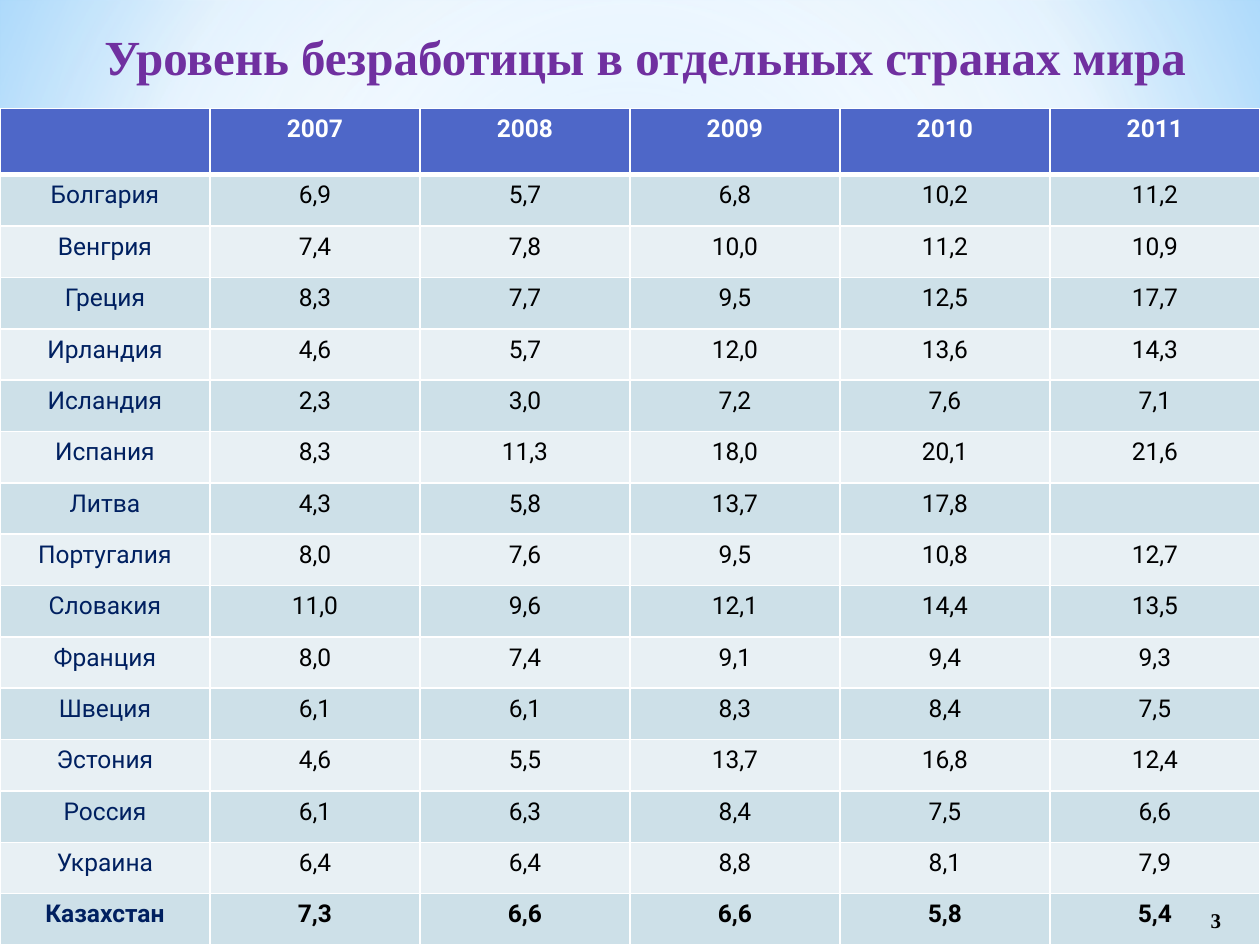
from dataclasses import dataclass

from lxml.etree import SubElement
from pptx import Presentation
from pptx.dml.color import RGBColor
from pptx.enum.shapes import MSO_SHAPE
from pptx.enum.text import MSO_ANCHOR, PP_ALIGN
from pptx.oxml.ns import qn
from pptx.util import Pt

WHITE = RGBColor(0xFF, 0xFF, 0xFF)
BLACK = RGBColor(0x00, 0x00, 0x00)
NAVY = RGBColor(0x00, 0x20, 0x60)
PURPLE = RGBColor(0x70, 0x30, 0xA0)
HEADER_BLUE = RGBColor(0x4E, 0x67, 0xC8)
BAND_DARK = RGBColor(0xCD, 0xE0, 0xE8)
BAND_LIGHT = RGBColor(0xE8, 0xF0, 0xF4)
SKY = RGBColor(0x9E, 0xD5, 0xFF)
DEEP_SKY = RGBColor(0x5B, 0xB9, 0xFF)
PALE_SKY = RGBColor(0xB4, 0xDC, 0xFA)

SLIDE_WIDTH, SLIDE_HEIGHT = 720, 540
TABLE_TOP = 61.92
HEADER_HEIGHT = 38


@dataclass
class GradientStop:
    position: int
    color: RGBColor
    opacity: int = 100


@dataclass
class Country:
    name: str
    rates: str
    bold: bool = False


YEARS = ["2007", "2008", "2009", "2010", "2011"]
COUNTRIES = [
    Country("Болгария", "6,9 5,7 6,8 10,2 11,2"),
    Country("Венгрия", "7,4 7,8 10,0 11,2 10,9"),
    Country("Греция", "8,3 7,7 9,5 12,5 17,7"),
    Country("Ирландия", "4,6 5,7 12,0 13,6 14,3"),
    Country("Исландия", "2,3 3,0 7,2 7,6 7,1"),
    Country("Испания", "8,3 11,3 18,0 20,1 21,6"),
    Country("Литва", "4,3 5,8 13,7 17,8"),
    Country("Португалия", "8,0 7,6 9,5 10,8 12,7"),
    Country("Словакия", "11,0 9,6 12,1 14,4 13,5"),
    Country("Франция", "8,0 7,4 9,1 9,4 9,3"),
    Country("Швеция", "6,1 6,1 8,3 8,4 7,5"),
    Country("Эстония", "4,6 5,5 13,7 16,8 12,4"),
    Country("Россия", "6,1 6,3 8,4 7,5 6,6"),
    Country("Украина", "6,4 6,4 8,8 8,1 7,9"),
    Country("Казахстан", "7,3 6,6 6,6 5,8 5,4", bold=True),
]


def write_text(text_frame, text: str, *, size: float = 14, font: str = "Roboto",
               color: RGBColor = BLACK, bold: bool = False) -> None:
    paragraph = text_frame.paragraphs[0]
    paragraph.alignment = PP_ALIGN.CENTER
    run = paragraph.add_run()
    run.text = text
    run.font.size = Pt(size)
    run.font.name = font
    run.font.bold = bold
    run.font.color.rgb = color


def add_text_box(slide, left: float, top: float, width: float, height: float,
                 text: str, anchor=MSO_ANCHOR.TOP, **text_format) -> None:
    box = slide.shapes.add_textbox(Pt(left), Pt(top), Pt(width), Pt(height))
    box.text_frame.word_wrap = True
    box.text_frame.vertical_anchor = anchor
    write_text(box.text_frame, text, **text_format)


def set_radial_gradient(fill, parent, stops: list[GradientStop],
                        focus: tuple[int, int, int, int]) -> None:
    """Fill with a circular gradient; focus is left, top, right, bottom in percent."""
    fill.gradient()
    gradient = parent.find(qn("a:gradFill"))
    for child in list(gradient):
        gradient.remove(child)
    stop_list = SubElement(gradient, qn("a:gsLst"))
    for stop in stops:
        element = SubElement(stop_list, qn("a:gs"), pos=str(stop.position * 1000))
        color = SubElement(element, qn("a:srgbClr"), val=str(stop.color))
        if stop.opacity < 100:
            SubElement(color, qn("a:alpha"), val=str(stop.opacity * 1000))
    shade = SubElement(gradient, qn("a:path"))
    shade.set("path", "circle")
    sides = {side: str(value * 1000) for side, value in zip("ltrb", focus)}
    SubElement(shade, qn("a:fillToRect"), **sides)


def add_background(slide) -> None:
    fill = slide.background.fill
    background = slide.element.cSld.find(qn("p:bg")).find(qn("p:bgPr"))
    set_radial_gradient(
        fill, background,
        [GradientStop(0, SKY), GradientStop(60, WHITE), GradientStop(100, DEEP_SKY)],
        (20, 10, 20, 60))
    glow = slide.shapes.add_shape(MSO_SHAPE.RECTANGLE, 0, 0, Pt(SLIDE_WIDTH), Pt(402))
    glow.shadow.inherit = False
    glow.line.fill.background()
    set_radial_gradient(
        glow.fill, glow.element.spPr,
        [GradientStop(0, WHITE, 89), GradientStop(48, WHITE, 62),
         GradientStop(100, PALE_SKY, 79)],
        (50, 50, 50, 50))


def set_borders(cell, top: float = 1, bottom: float = 1) -> None:
    properties = cell._tc.get_or_add_tcPr()
    for side, width in (("L", 1), ("R", 1), ("T", top), ("B", bottom)):
        line = SubElement(properties, qn(f"a:ln{side}"), w=str(Pt(width)))
        solid = SubElement(line, qn("a:solidFill"))
        SubElement(solid, qn("a:srgbClr"), val=str(WHITE))


def fill_cell(cell, text: str, fill: RGBColor, *, top: float = 1, bottom: float = 1,
              **text_format) -> None:
    set_borders(cell, top, bottom)
    cell.fill.solid()
    cell.fill.fore_color.rgb = fill
    if text:
        write_text(cell.text_frame, text, **text_format)


def add_unemployment_table(slide) -> None:
    row_count, column_count = len(COUNTRIES) + 1, len(YEARS) + 1
    height = SLIDE_HEIGHT - TABLE_TOP
    table = slide.shapes.add_table(row_count, column_count, 0, Pt(TABLE_TOP),
                                   Pt(SLIDE_WIDTH), Pt(height)).table
    table.first_row = False
    table.horz_banding = False
    for row in table.rows:
        row.height = Pt((height - HEADER_HEIGHT) / len(COUNTRIES))
    table.rows[0].height = Pt(HEADER_HEIGHT)

    for column, year in enumerate(["", *YEARS]):
        fill_cell(table.cell(0, column), year, HEADER_BLUE, bottom=3,
                  color=WHITE, bold=True)
    for row, country in enumerate(COUNTRIES, start=1):
        values = [country.name, *country.rates.split()]
        values += [""] * (column_count - len(values))
        for column, value in enumerate(values):
            fill_cell(table.cell(row, column), value,
                      BAND_DARK if row % 2 else BAND_LIGHT,
                      top=3 if row == 1 else 1,
                      color=BLACK if column else NAVY, bold=country.bold)


def main() -> None:
    presentation = Presentation()
    presentation.slide_width = Pt(SLIDE_WIDTH)
    presentation.slide_height = Pt(SLIDE_HEIGHT)
    slide = presentation.slides.add_slide(presentation.slide_layouts[6])
    add_background(slide)
    add_text_box(slide, 33.84, 11.52, 669.6, 41.04,
                 "Уровень безработицы в отдельных странах мира",
                 size=28, font="Times New Roman", color=PURPLE, bold=True)
    add_unemployment_table(slide)
    add_text_box(slide, 669.6, 511.2, 50.4, 28.8, "3", anchor=MSO_ANCHOR.MIDDLE,
                 size=12, font="Times New Roman", bold=True)
    presentation.save("out.pptx")


if __name__ == "__main__":
    main()
